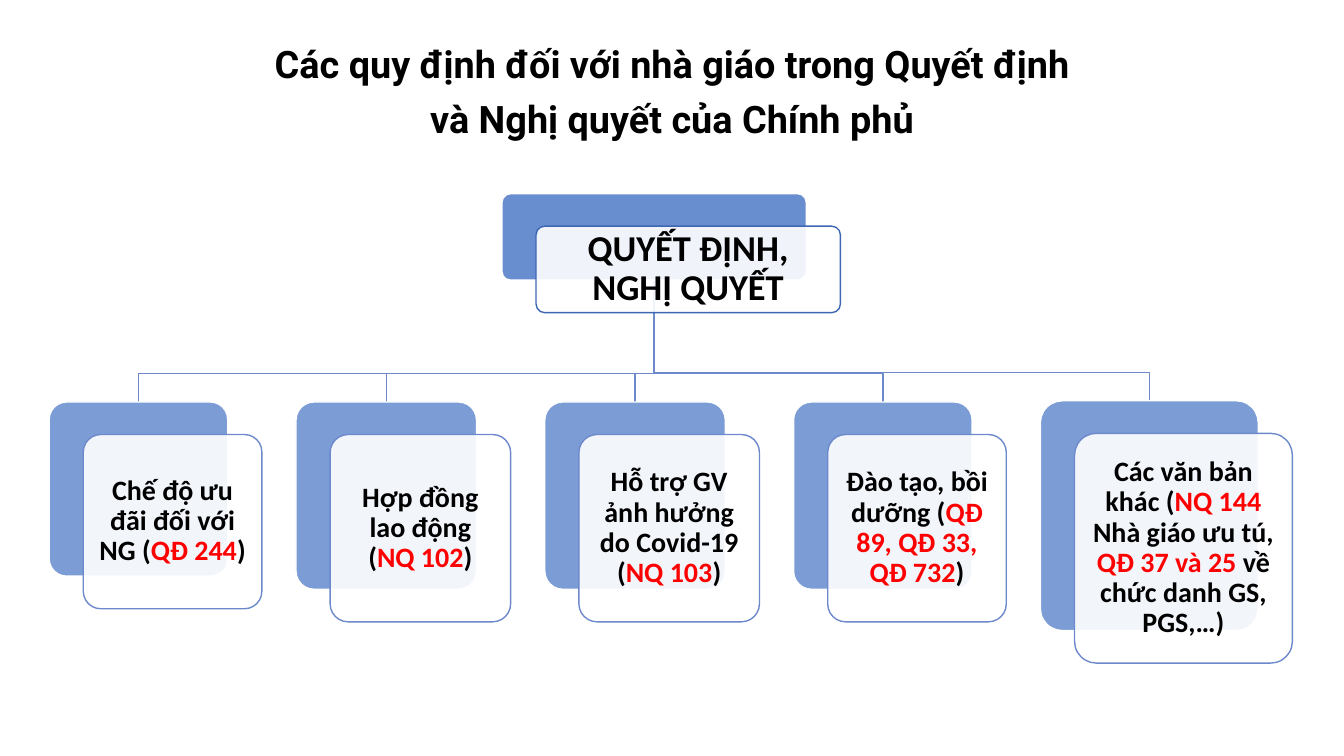
from pptx import Presentation
from pptx.dml.color import RGBColor
from pptx.enum.shapes import MSO_SHAPE
from pptx.enum.text import MSO_ANCHOR, MSO_AUTO_SIZE, PP_ALIGN
from pptx.oxml.ns import qn
from pptx.util import Cm, Pt
from lxml import etree

ROUNDED = MSO_SHAPE.ROUNDED_RECTANGLE
MIDDLE = MSO_ANCHOR.MIDDLE
NO_FIT = MSO_AUTO_SIZE.NONE
CENTER = PP_ALIGN.CENTER
TITLE_ONLY = 5

BLACK, RED, WHITE, BLUE = "000000", "FF0000", "FFFFFF", "4472C4"
HEAD_LINE, BRANCH_LINE = "3E67B2", "6D89CB"

# Lengths in centimetres
SHIFT_X, SHIFT_Y = 0.86, 0.82
BEND_RISE = 0.71
HEAD_BOX = (12.65, 4.88, 7.67, 2.18)
FIRST_LEFT = 1.24

TITLE = ["Các quy định đối với nhà giáo trong Quyết định",
         "và Nghị quyết của Chính phủ"]
HEAD = [[("QUYẾT ĐỊNH,", BLACK)], [("NGHỊ QUYẾT", BLACK)]]
# top, width, height, runs
BRANCHES = [
    (10.13, 4.5, 4.39, [("Chế độ ưu đãi đối với NG (", BLACK), ("QĐ 244", RED),
                        (")", BLACK)]),
    (10.13, 4.55, 4.72, [("Hợp đồng lao động (", BLACK), ("NQ 102", RED),
                         (")", BLACK)]),
    (10.13, 4.55, 4.72, [("Hỗ trợ GV ảnh hưởng do Covid-19 (", BLACK),
                         ("NQ 103", RED), (")", BLACK)]),
    (10.13, 4.5, 4.72, [("Đào tạo, bồi dưỡng (", BLACK),
                        ("QĐ 89, QĐ 33, QĐ 732", RED), (")", BLACK)]),
    (10.1, 5.49, 5.79, [("Các văn bản khác (", BLACK), ("NQ 144 ", RED),
                        ("Nhà giáo ưu tú, ", BLACK), ("QĐ 37 và 25 ", RED),
                        ("về chức danh GS, PGS,…)", BLACK)]),
]


def color(hex_string):
    return RGBColor.from_string(hex_string)


def add_run(paragraph, text, size, font_name, hex_string):
    run = paragraph.add_run()
    run.text = text
    run.font.size = Pt(size)
    run.font.name = font_name
    run.font.bold = True
    run.font.color.rgb = color(hex_string)


def add_panel(slide, box, fill, opacity, line):
    """Add a rounded rectangle whose fill has the given opacity in percent."""
    shape = slide.shapes.add_shape(ROUNDED, *[Cm(length) for length in box])
    shape.shadow.inherit = False
    shape.adjustments[0] = 0.1
    shape.fill.solid()
    shape.fill.fore_color.rgb = color(fill)
    fill_color = shape.fill._xPr.find(qn("a:solidFill"))[0]
    etree.SubElement(fill_color, qn("a:alpha"), val=str(opacity * 1000))
    shape.line.color.rgb = color(line)
    shape.line.width = Pt(1)
    return shape


def add_card(slide, box, paragraphs, size, inset, opacity, line):
    """Add a blue panel with a shifted white panel that carries the text."""
    left, top, width, height = box
    add_panel(slide, box, BLUE, opacity, WHITE)
    front_box = (left + SHIFT_X, top + SHIFT_Y, width, height)
    frame = add_panel(slide, front_box, WHITE, 90, line).text_frame
    frame.word_wrap = True
    frame.vertical_anchor = MIDDLE
    frame.margin_left = frame.margin_right = Cm(inset)
    frame.margin_top = frame.margin_bottom = Cm(inset)
    for index, runs in enumerate(paragraphs):
        paragraph = frame.add_paragraph() if index else frame.paragraphs[0]
        paragraph.alignment = CENTER
        paragraph.line_spacing = 0.9
        for text, hex_string in runs:
            add_run(paragraph, text, size, "Calibri", hex_string)


def add_branch_line(slide, parent_box, child_box):
    """Draw a bent line from the parent's bottom to the child's top."""
    left, top, width, height = parent_box
    start_x, start_y = left + width / 2, top + height
    end_x, end_y = child_box[0] + child_box[2] / 2, child_box[1]
    bend_y = end_y - BEND_RISE
    builder = slide.shapes.build_freeform(Cm(start_x), Cm(start_y))
    corners = [(start_x, bend_y), (end_x, bend_y), (end_x, end_y)]
    builder.add_line_segments([(Cm(x), Cm(y)) for x, y in corners], close=False)
    shape = builder.convert_to_shape()
    shape.shadow.inherit = False
    shape.fill.background()
    shape.line.color.rgb = color(BRANCH_LINE)
    shape.line.width = Pt(1)


def add_title(slide, left, top, width, height):
    title = slide.shapes.title
    title.left, title.top = Cm(left), Cm(top)
    title.width, title.height = Cm(width), Cm(height)
    frame = title.text_frame
    frame.auto_size = NO_FIT
    frame.word_wrap = True
    frame.vertical_anchor = MIDDLE
    paragraph = frame.paragraphs[0]
    paragraph.alignment = CENTER
    paragraph.line_spacing = 1.2
    for index, text in enumerate(TITLE):
        if index:
            paragraph.add_line_break()
        add_run(paragraph, text, 27, "Roboto", BLACK)


def add_hierarchy(slide, left, head_box):
    boxes = []
    for top, width, height, _ in BRANCHES:
        boxes.append((left, top, width, height))
        left += width + 2 * SHIFT_X
    for box in reversed(boxes):
        add_branch_line(slide, head_box, box)
    add_card(slide, head_box, HEAD, 26, 0.28, 80, HEAD_LINE)
    for box, branch in zip(boxes, BRANCHES):
        add_card(slide, box, [branch[-1]], 20, 0.2, 70, BRANCH_LINE)


def main():
    presentation = Presentation()
    presentation.slide_width, presentation.slide_height = Cm(33.87), Cm(19.05)
    slide = presentation.slides.add_slide(presentation.slide_layouts[TITLE_ONLY])
    add_title(slide, 2.33, 0.87, 29.21, 2.62)
    add_hierarchy(slide, FIRST_LEFT, HEAD_BOX)
    presentation.save("out.pptx")


if __name__ == "__main__":
    main()
